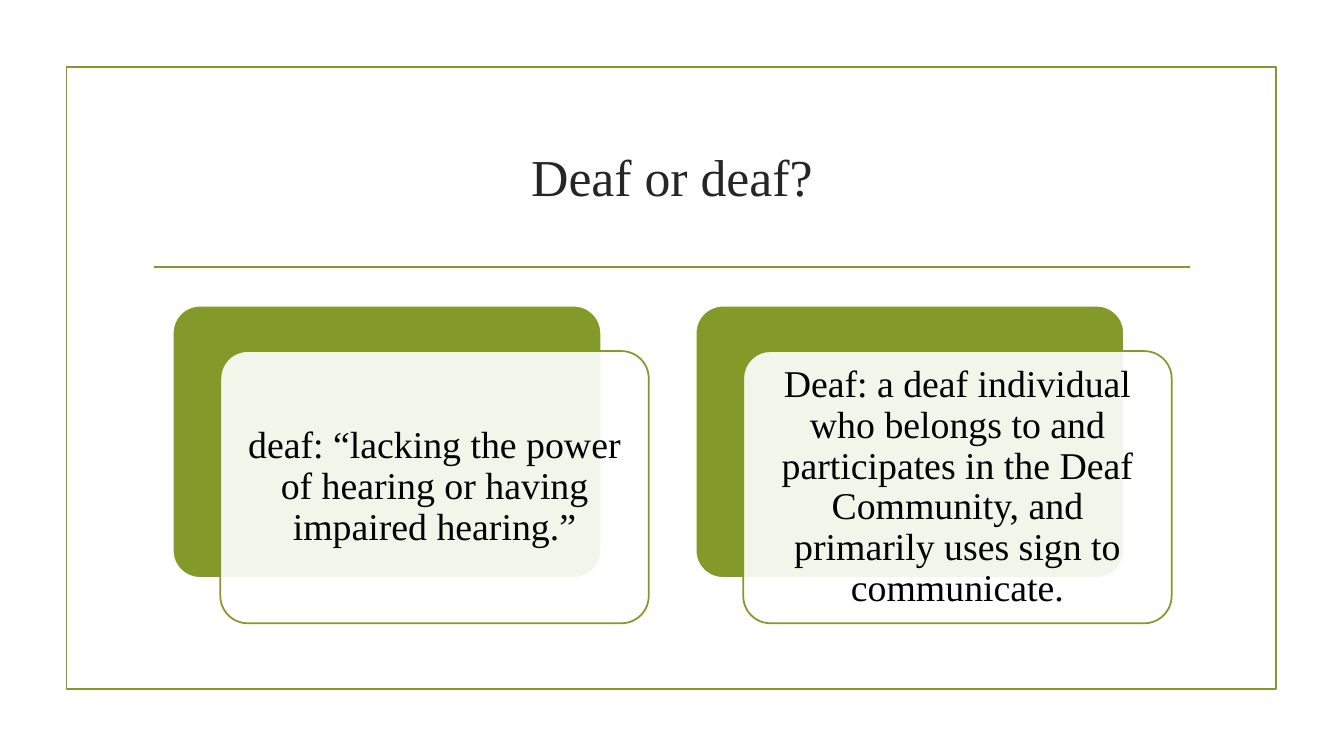
from lxml.etree import SubElement
from pptx import Presentation
from pptx.dml.color import RGBColor
from pptx.enum.shapes import MSO_CONNECTOR as Connector, MSO_SHAPE as Shape
from pptx.enum.text import MSO_ANCHOR as Anchor, PP_ALIGN as Align
from pptx.oxml.ns import qn
from pptx.util import Pt

OLIVE = RGBColor(0x83, 0x99, 0x2A)
WHITE = RGBColor(0xFF, 0xFF, 0xFF)
CHARCOAL = RGBColor(0x26, 0x26, 0x26)
BLACK = RGBColor(0, 0, 0)
FONT = "Times New Roman"
RULE_WIDTH = 1.25

DEFINITIONS = [
    "deaf: “lacking the power of hearing or having impaired hearing.”",
    "Deaf: a deaf individual who belongs to and participates in the Deaf "
    "Community, and primarily uses sign to communicate.",
]


def add_panel(slide, kind, box, fill, line):
    panel = slide.shapes.add_shape(kind, *map(Pt, box))
    panel.shadow.inherit = False
    if fill is None:
        panel.fill.background()
    else:
        panel.fill.solid()
        panel.fill.fore_color.rgb = fill
    panel.line.color.rgb = line
    panel.line.width = Pt(RULE_WIDTH)
    return panel


def add_centred_text(slide, box, wording, size, color, inset):
    frame = slide.shapes.add_textbox(*map(Pt, box)).text_frame
    frame.word_wrap = True
    frame.vertical_anchor = Anchor.MIDDLE
    frame.margin_left = frame.margin_right = Pt(inset)
    frame.margin_top = frame.margin_bottom = Pt(inset)
    frame.text = wording
    paragraph = frame.paragraphs[0]
    paragraph.alignment = Align.CENTER
    paragraph.line_spacing = 0.9
    font = paragraph.runs[0].font
    font.name, font.size, font.color.rgb = FONT, Pt(size), color


def add_frame(slide, box):
    left, top, width, height = box
    add_panel(slide, Shape.RECTANGLE, box, None, OLIVE)
    rule_y = Pt(top + 142.6)
    divider = slide.shapes.add_connector(
        Connector.STRAIGHT, Pt(left + 62.5), rule_y, Pt(left + width - 61.5), rule_y)
    divider.line.color.rgb = OLIVE
    divider.line.width = Pt(RULE_WIDTH)
    SubElement(divider._element.spPr, qn("a:effectLst"))


def add_definition(slide, box, definition):
    left, top, width, height = box
    shift_x, shift_y, padding = 34, 32.4, 5.6
    card_width, card_height = width - shift_x, height - shift_y
    front_box = left + shift_x, top + shift_y, card_width, card_height

    back = add_panel(slide, Shape.ROUNDED_RECTANGLE,
                     (left, top, card_width, card_height), OLIVE, WHITE)
    front = add_panel(slide, Shape.ROUNDED_RECTANGLE, front_box, WHITE, OLIVE)
    for card in (back, front):
        card.adjustments[0] = 0.1
    tint = front._element.spPr.find(qn("a:solidFill"))[0]
    SubElement(tint, qn("a:alpha"), val="90000")

    text_box = (front_box[0] + padding, front_box[1] + padding,
                card_width - 2 * padding, card_height - 2 * padding)
    add_centred_text(slide, text_box, definition, 27, BLACK, 8)


def add_definitions(slide, box):
    left, top, width, height = box
    gap = 33.5
    column = (width - gap) / len(DEFINITIONS)
    for index, definition in enumerate(DEFINITIONS):
        add_definition(slide, (left + index * (column + gap), top, column, height),
                       definition)


def main():
    deck = Presentation()
    deck.slide_width, deck.slide_height = Pt(960), Pt(540)
    slide = deck.slides.add_slide(deck.slide_layouts[6])
    add_frame(slide, (47.6, 48, 864, 444))
    add_centred_text(slide, (102, 77, 756, 103), "Deaf or deaf?", 37, CHARCOAL, 4)
    add_definitions(slide, (123.4, 218.4, 713.5, 226.8))
    deck.save("out.pptx")


if __name__ == "__main__":
    main()
